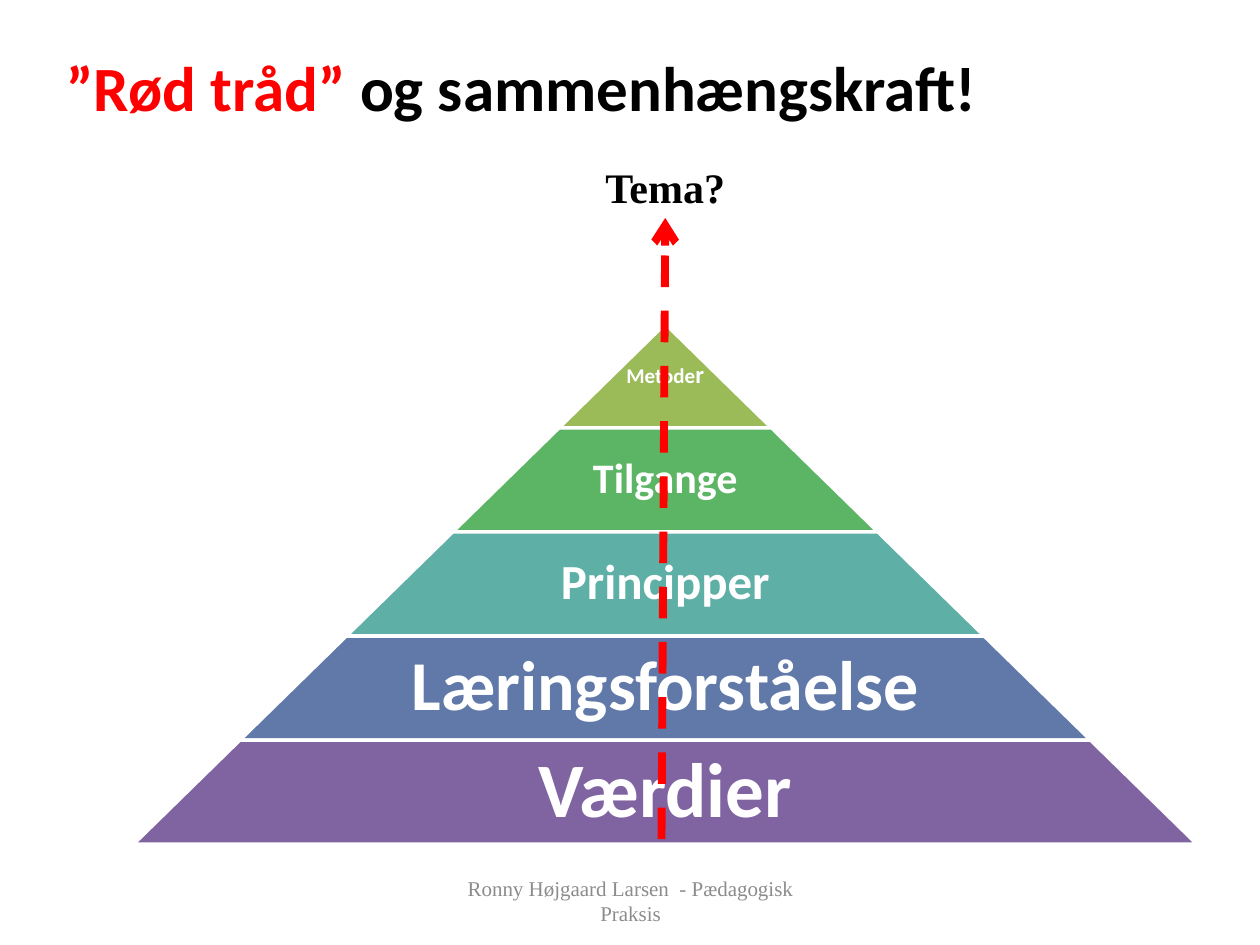
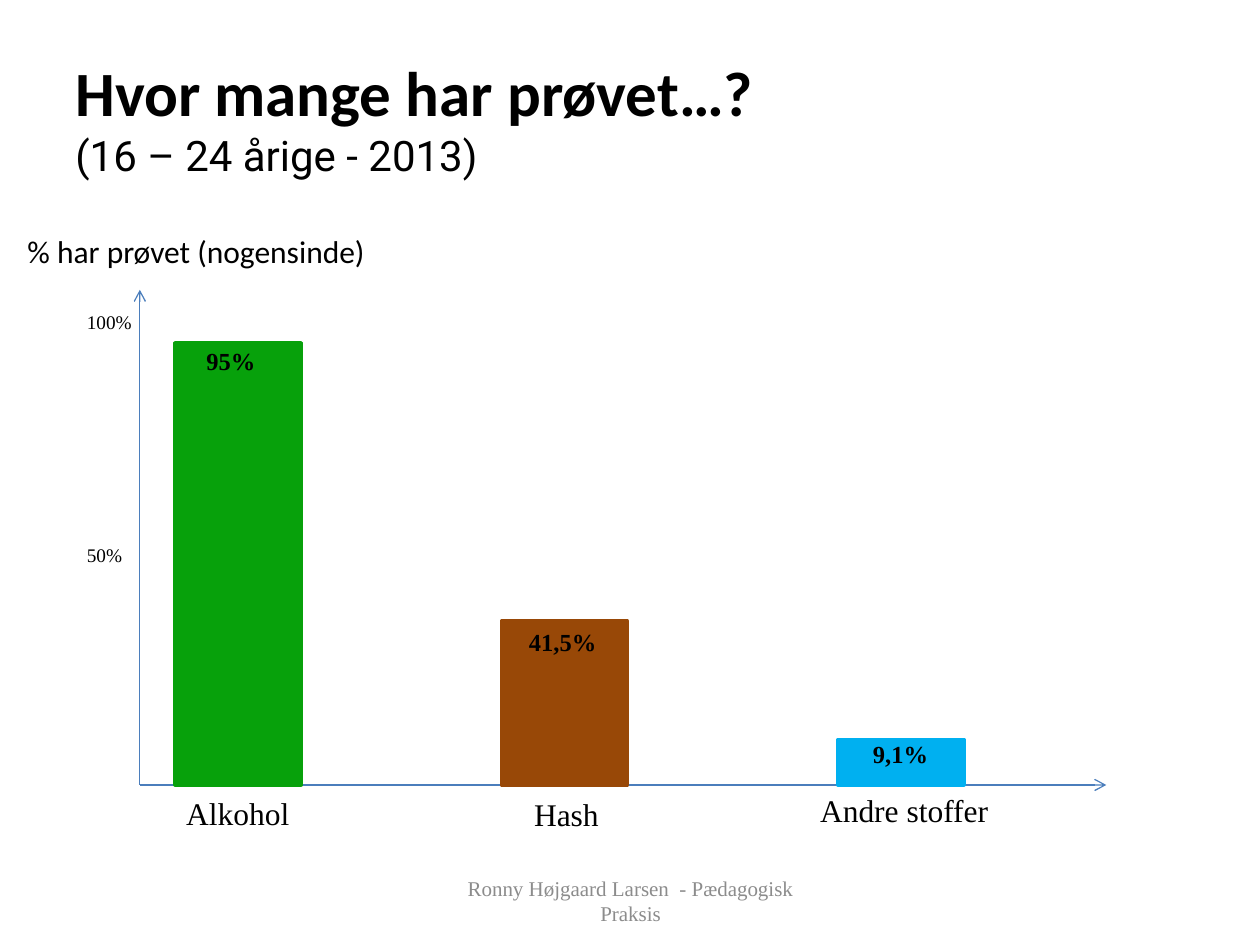
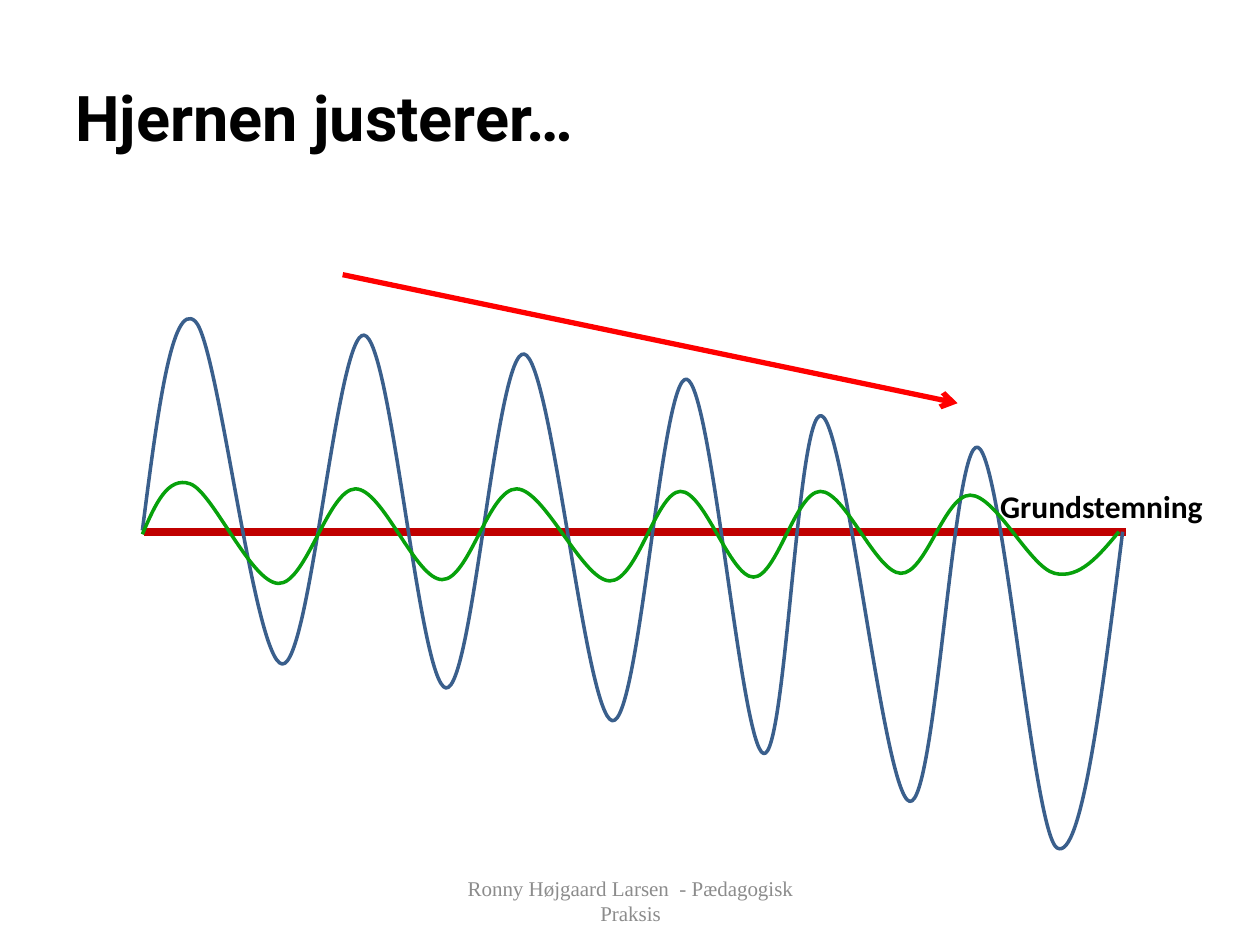
from lxml.etree import SubElement
from pptx import Presentation
from pptx.dml.color import RGBColor
from pptx.enum.dml import MSO_LINE
from pptx.enum.shapes import MSO_CONNECTOR, MSO_SHAPE
from pptx.enum.text import MSO_ANCHOR, PP_ALIGN
from pptx.oxml.ns import qn
from pptx.util import Inches, Pt

# Colours
BLACK = RGBColor(0x00, 0x00, 0x00)
WHITE = RGBColor(0xFF, 0xFF, 0xFF)
GREY = RGBColor(0x8C, 0x8C, 0x8C)
RED = RGBColor(0xFF, 0x00, 0x00)
DARK_RED = RGBColor(0xC0, 0x00, 0x00)
GREEN = RGBColor(0x07, 0xA1, 0x0B)
BROWN = RGBColor(0x98, 0x48, 0x07)
SKY = RGBColor(0x00, 0xB0, 0xF0)
AXIS_BLUE = RGBColor(0x4B, 0x7E, 0xBC)
WAVE_BLUE = RGBColor(0x3A, 0x5F, 0x8C)
OLIVE = RGBColor(0x9B, 0xBB, 0x59)
LEAF = RGBColor(0x5C, 0xB5, 0x65)
TEAL = RGBColor(0x5E, 0xAF, 0xA6)
STEEL = RGBColor(0x61, 0x79, 0xA8)
PURPLE = RGBColor(0x80, 0x64, 0xA2)

# Fonts
SANS = "Calibri"
SERIF = "Times New Roman"
ROBOTO = "Roboto"

FOOTER = "Ronny Højgaard Larsen  - Pædagogisk Praksis"


def write(paragraph, text, size=18, font=SERIF, color=BLACK, bold=False):
    """Add one formatted run to a paragraph."""
    run = paragraph.add_run()
    run.text = text
    run.font.size = Pt(size)
    run.font.name = font
    run.font.color.rgb = color
    run.font.bold = bold


def spline_controls(points):
    """Return the two control points of each segment of a smooth curve."""
    def tangent_step(index):
        before, after = points[index - 1], points[index + 1]
        return [(after[axis] - before[axis]) / 6 for axis in (0, 1)]

    def middle(first, second):
        return [(first[axis] + second[axis]) / 2 for axis in (0, 1)]

    controls = []
    last = len(points) - 1
    for index in range(last):
        start, end = points[index], points[index + 1]
        leave = arrive = None
        if index > 0:
            leave = [p + step for p, step in zip(start, tangent_step(index))]
        if index + 1 < last:
            arrive = [p - step for p, step in zip(end, tangent_step(index + 1))]
        controls.append((leave or middle(start, arrive), arrive or middle(leave, end)))
    return controls


class Deck:
    """Holds the shared style and the current slide."""

    def __init__(self):
        self.presentation = Presentation()
        self.presentation.slide_width = Inches(10)
        self.presentation.slide_height = Inches(7.5)
        self.slide = None

    def new_slide(self):
        self.slide = self.presentation.slides.add_slide(self.presentation.slide_layouts[6])
        self.text(FOOTER, 3.42, 6.95, 3.17, 0.4, align=PP_ALIGN.CENTER,
                  anchor=MSO_ANCHOR.MIDDLE, size=12, color=GREY)

    def frame(self, left, top, width, height, anchor=MSO_ANCHOR.TOP, wrap=True):
        box = self.slide.shapes.add_textbox(Inches(left), Inches(top), Inches(width), Inches(height))
        box.text_frame.word_wrap = wrap
        box.text_frame.vertical_anchor = anchor
        return box.text_frame

    def text(self, text, left, top, width, height, align=PP_ALIGN.LEFT,
             anchor=MSO_ANCHOR.TOP, wrap=True, **style):
        frame = self.frame(left, top, width, height, anchor, wrap)
        frame.paragraphs[0].alignment = align
        write(frame.paragraphs[0], text, **style)
        return frame

    def title(self, *lines, left=0.5, top=0.3, height=1.25):
        """Each line is a list of (text, style) pairs."""
        frame = self.frame(left, top, 9, height, MSO_ANCHOR.MIDDLE)
        for index, line in enumerate(lines):
            paragraph = frame.add_paragraph() if index else frame.paragraphs[0]
            for text, style in line:
                write(paragraph, text, **{"size": 36, "font": SANS, "bold": True, **style})

    def shape(self, kind, left, top, width, height, fill, line):
        shape = self.slide.shapes.add_shape(kind, Inches(left), Inches(top),
                                            Inches(width), Inches(height))
        shape.shadow.inherit = False
        shape.fill.solid()
        shape.fill.fore_color.rgb = fill
        shape.line.color.rgb = line
        shape.line.width = Pt(2)
        return shape

    def line(self, start, end, color, width, arrow=False, dash=None):
        connector = self.slide.shapes.add_connector(
            MSO_CONNECTOR.STRAIGHT, *[Inches(value) for value in (*start, *end)])
        connector.line.color.rgb = color
        connector.line.width = Pt(width)
        if dash:
            connector.line.dash_style = dash
        if arrow:
            SubElement(connector.line._get_or_add_ln(), qn("a:tailEnd"), type="arrow")
        SubElement(connector._element.spPr, qn("a:effectLst"))

    def curve(self, points, color):
        """Draw a smooth open curve through points."""
        vertices = [(Inches(x), Inches(y)) for x, y in points]
        builder = self.slide.shapes.build_freeform(*vertices[0])
        builder.add_line_segments(vertices[1:], close=False)
        shape = builder.convert_to_shape()
        shape.shadow.inherit = False
        shape.fill.background()
        shape.line.color.rgb = color
        shape.line.width = Pt(2)
        # Turn the straight segments into Bezier segments
        segments = list(shape._element.iter(qn("a:lnTo")))
        for segment, controls in zip(segments, spline_controls(vertices)):
            segment.tag = qn("a:cubicBezTo")
            for position, (x, y) in enumerate(controls):
                point = segment.makeelement(
                    qn("a:pt"), {"x": str(int(x - shape.left)), "y": str(int(y - shape.top))})
                segment.insert(position, point)


def pyramid_slide(deck):
    deck.new_slide()
    deck.title([("”Rød tråd” ", {"color": RED}), ("og sammenhængskraft!", {})],
               left=0.43, top=0.25, height=0.87)

    # Pyramid levels, from the tip down
    levels = [("Metode", 12, OLIVE), ("Tilgange", 24, LEAF), ("Principper", 28, TEAL),
              ("Læringsforståelse", 40, STEEL), ("Værdier", 44, PURPLE)]
    center, tip, level_height, width_step = 5.28, 2.57, 0.826, 1.688
    for index, (label, size, color) in enumerate(levels):
        width = width_step * (index + 1)
        top = tip + level_height * index
        level = deck.shape(MSO_SHAPE.TRAPEZOID, center - width / 2, top, width,
                           level_height, color, WHITE)
        level.adjustments[0] = 1.022
        label_width = width * 0.65 if index else width
        style = {"font": SANS, "color": WHITE, "bold": True}
        frame = deck.text(label, center - label_width / 2, top, label_width, level_height,
                          align=PP_ALIGN.CENTER, anchor=MSO_ANCHOR.MIDDLE, size=size, **style)
        frame.margin_left = frame.margin_right = Inches(0.04)
        frame.margin_top = frame.margin_bottom = Inches(0.04)
        frame.paragraphs[0].line_spacing = 0.9
        if index == 0:
            write(frame.paragraphs[0], "r", size=14, **style)

    # Theme and the thread leading to it
    deck.text("Tema?", 3.35, 1.23, 3.86, 0.5, align=PP_ALIGN.CENTER, size=24, bold=True)
    deck.line((5.25, 6.66), (5.28, 1.73), RED, 4.5, arrow=True, dash=MSO_LINE.DASH)


def bars_slide(deck):
    deck.new_slide()
    deck.title([("Hvor mange har prøvet…? ", {})],
               [("(16 – 24 årige - 2013)", {"size": 24, "font": ROBOTO, "bold": False})])

    # Axes
    origin = axis_left, base = 1.11, 6.23
    deck.line(origin, (axis_left, 2.3), AXIS_BLUE, 0.75, arrow=True)
    deck.line(origin, (8.78, base), AXIS_BLUE, 0.75, arrow=True)
    deck.text("% har prøvet (nogensinde)", 0.12, 1.79, 3.07, 0.4, font=SANS)
    for label, top, width in [("100%", 2.41, 1.22), ("50%", 4.26, 0.61)]:
        deck.text(label, 0.59, top, width, 0.29, size=11)

    # Bars: left, height, colour; then name and value as text, left, top, width
    bars = [
        (1.39, 3.51, GREEN, ("Alkohol", 1.38, 6.25, 1.03), ("95%", 1.54, 2.7, 0.6)),
        (3.98, 1.3, BROWN, ("Hash", 4.14, 6.26, 0.72), ("41,5%", 4.1, 4.93, 0.74)),
        (6.65, 0.36, SKY, ("Andre stoffer", 6.41, 6.23, 1.55), ("9,1%", 6.83, 5.82, 0.64)),
    ]
    for left, height, color, name, value in bars:
        deck.shape(MSO_SHAPE.RECTANGLE, left, base - height, 1, height, color, color)
        deck.text(*name, 0.4, wrap=False)
        deck.text(*value, 0.34, wrap=False, size=14, bold=True)


def waves_slide(deck):
    deck.new_slide()
    deck.title([("Hjernen justerer…", {"font": ROBOTO})])

    # Base mood
    deck.line((1.14, 4.22), (8.94, 4.22), DARK_RED, 4.5)
    deck.text("Grundstemning", 7.84, 3.82, 1.97, 0.4, font=SANS, bold=True)

    # Large and small swings around it
    large_swings = [(1.13, 4.21), (1.55, 2.55), (2.24, 5.27), (2.89, 2.66), (3.54, 5.46),
                    (4.16, 2.81), (4.86, 5.72), (5.45, 3.01), (6.06, 5.98), (6.52, 3.3),
                    (7.22, 6.36), (7.76, 3.55), (8.39, 6.73), (8.91, 4.22)]
    small_swings = [(1.13, 4.24), (1.51, 3.84), (2.21, 4.63), (2.82, 3.88), (3.51, 4.6),
                    (4.1, 3.88), (4.84, 4.61), (5.4, 3.9), (5.98, 4.58), (6.51, 3.9),
                    (7.15, 4.55), (7.7, 3.93), (8.37, 4.55), (8.88, 4.22)]
    deck.curve(large_swings, WAVE_BLUE)
    deck.curve(small_swings, GREEN)

    # Falling trend
    deck.line((2.72, 2.18), (7.6, 3.2), RED, 3, arrow=True)


def main():
    deck = Deck()
    pyramid_slide(deck)
    bars_slide(deck)
    waves_slide(deck)
    deck.presentation.save("out.pptx")


if __name__ == "__main__":
    main()
